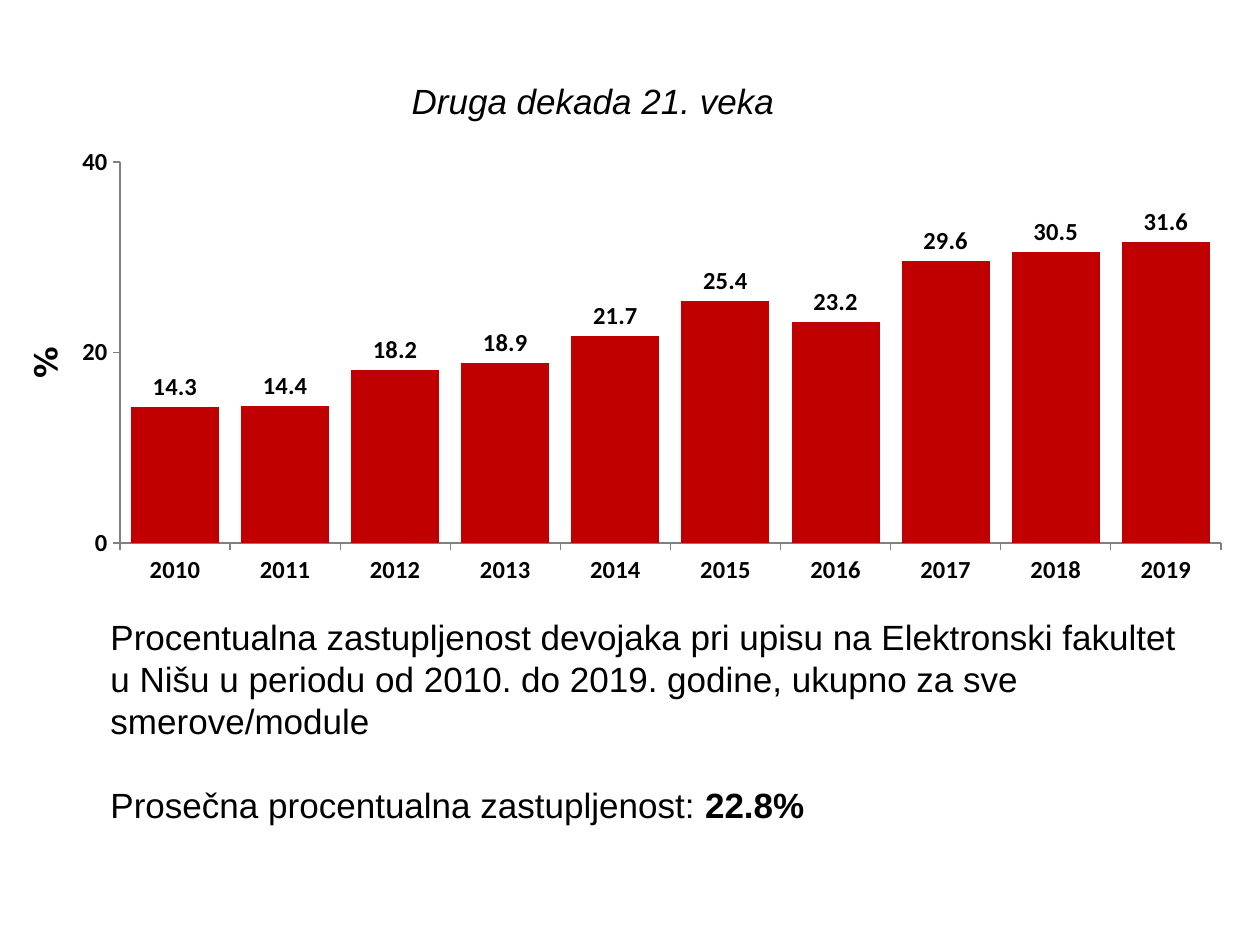
from dataclasses import dataclass

import pptx
import pptx.chart.data
import pptx.dml.color
import pptx.enum.chart
import pptx.enum.text
import pptx.oxml
import pptx.oxml.ns
import pptx.util

PX_PER_INCH = 126


@dataclass(frozen=True)
class Theme:
    text: str = "000000"
    bar: str = "C00000"
    axis: str = "808080"
    body_font: str = "Arial"
    chart_font: str = "Calibri"
    unit_font: str = "DejaVu Sans"
    body_size: int = 20
    chart_size: int = 14
    unit_size: int = 18
    axis_width: float = 0.75


@dataclass(frozen=True)
class Box:
    left: int
    top: int
    width: int
    height: int

    def emu(self) -> list[int]:
        return [px(n) for n in (self.left, self.top, self.width, self.height)]


@dataclass(frozen=True)
class Run:
    text: str
    bold: bool = False
    italic: bool = False


@dataclass(frozen=True)
class TextBlock:
    box: Box
    paragraphs: list[list[Run]]
    font: str
    size: int
    centered: bool = False
    paragraph_gap: int = 0
    margin: int | None = None
    rotation: int = 0


THEME = Theme()
YEARS = [str(year) for year in range(2010, 2020)]
SHARES = [14.3, 14.4, 18.2, 18.9, 21.7, 25.4, 23.2, 29.6, 30.5, 31.6]
CHART_BOX = Box(26, 146, 1207, 620)
PLOT_BOX = Box(120, 162, 1101, 381)

TEXT_BLOCKS = [
    TextBlock(Box(-91, 343, 273, 39), [[Run("%", bold=True)]],
              THEME.unit_font, THEME.unit_size, centered=True, margin=0, rotation=270),
    TextBlock(Box(98, 609, 1102, 267), [
        [Run("Procentualna zastupljenost devojaka pri upisu na Elektronski fakultet "
             "u Nišu u periodu od 2010. do 2019. godine, ukupno za sve smerove/module")],
        [Run("Prosečna procentualna zastupljenost: "), Run("22.8%", bold=True)],
    ], THEME.body_font, THEME.body_size, paragraph_gap=24),
    TextBlock(Box(94, 73, 998, 55), [[Run("Druga dekada 21. veka", italic=True)]],
              THEME.body_font, THEME.body_size, centered=True),
]


def px(length: int) -> int:
    return round(length * pptx.util.Inches(1) / PX_PER_INCH)


def rgb(value: str) -> pptx.dml.color.RGBColor:
    return pptx.dml.color.RGBColor.from_string(value)


def style_font(font, name: str, size: int, bold: bool = False, italic: bool = False) -> None:
    font.name = name
    font.size = pptx.util.Pt(size)
    font.bold = bold
    font.italic = italic
    font.color.rgb = rgb(THEME.text)


def add_text(slide, block: TextBlock) -> None:
    shape = slide.shapes.add_textbox(*block.box.emu())
    shape.rotation = block.rotation
    frame = shape.text_frame
    frame.word_wrap = True
    if block.margin is not None:
        frame.margin_left = frame.margin_right = px(block.margin)
        frame.margin_top = frame.margin_bottom = px(block.margin)
    for index, runs in enumerate(block.paragraphs):
        paragraph = frame.add_paragraph() if index else frame.paragraphs[0]
        if index:
            paragraph.space_before = pptx.util.Pt(block.paragraph_gap)
        if block.centered:
            paragraph.alignment = pptx.enum.text.PP_ALIGN.CENTER
        for item in runs:
            run = paragraph.add_run()
            run.text = item.text
            style_font(run.font, block.font, block.size, item.bold, item.italic)


def style_axis(axis) -> None:
    axis.has_major_gridlines = False
    axis.major_tick_mark = pptx.enum.chart.XL_TICK_MARK.OUTSIDE
    axis.minor_tick_mark = pptx.enum.chart.XL_TICK_MARK.NONE
    axis.format.line.color.rgb = rgb(THEME.axis)
    axis.format.line.width = pptx.util.Pt(THEME.axis_width)
    style_font(axis.tick_labels.font, THEME.chart_font, THEME.chart_size, bold=True)


def place_plot(chart, chart_box: Box, plot: Box) -> None:
    """Fix the inner plot area as fractions of the chart's box."""
    fractions = {
        "x": (plot.left - chart_box.left) / chart_box.width,
        "y": (plot.top - chart_box.top) / chart_box.height,
        "w": plot.width / chart_box.width,
        "h": plot.height / chart_box.height,
    }
    settings = {"layoutTarget": "inner", "xMode": "edge", "yMode": "edge", **fractions}
    children = "".join(f'<c:{tag} val="{value}"/>' for tag, value in settings.items())
    layout = pptx.oxml.parse_xml(
        f'<c:layout {pptx.oxml.ns.nsdecls("c")}>'
        f"<c:manualLayout>{children}</c:manualLayout></c:layout>")
    plot_area = chart.plots[0]._element.getparent()
    for old_layout in plot_area.findall(pptx.oxml.ns.qn("c:layout")):
        plot_area.remove(old_layout)
    plot_area.insert(0, layout)


def add_share_chart(slide) -> None:
    data = pptx.chart.data.CategoryChartData()
    data.categories = YEARS
    data.add_series("Series 1", SHARES)
    chart = slide.shapes.add_chart(
        pptx.enum.chart.XL_CHART_TYPE.COLUMN_CLUSTERED, *CHART_BOX.emu(), data).chart
    chart.has_legend = False
    chart.has_title = False
    style_font(chart.font, THEME.chart_font, THEME.chart_size)
    style_axis(chart.category_axis)
    style_axis(chart.value_axis)
    chart.value_axis.minimum_scale = 0
    chart.value_axis.maximum_scale = 40
    chart.value_axis.major_unit = 20

    plot = chart.plots[0]
    plot.gap_width = 25
    plot.vary_by_categories = False
    fill = plot.series[0].format.fill
    fill.solid()
    fill.fore_color.rgb = rgb(THEME.bar)
    labels = plot.series[0].data_labels
    labels.show_value = True
    labels.position = pptx.enum.chart.XL_LABEL_POSITION.OUTSIDE_END
    style_font(labels.font, THEME.chart_font, THEME.chart_size, bold=True)
    place_plot(chart, CHART_BOX, PLOT_BOX)


def main() -> None:
    presentation = pptx.Presentation()
    presentation.slide_width = px(1260)
    presentation.slide_height = px(945)
    slide = presentation.slides.add_slide(presentation.slide_layouts[6])
    add_share_chart(slide)
    for block in TEXT_BLOCKS:
        add_text(slide, block)
    presentation.save("out.pptx")


if __name__ == "__main__":
    main()
